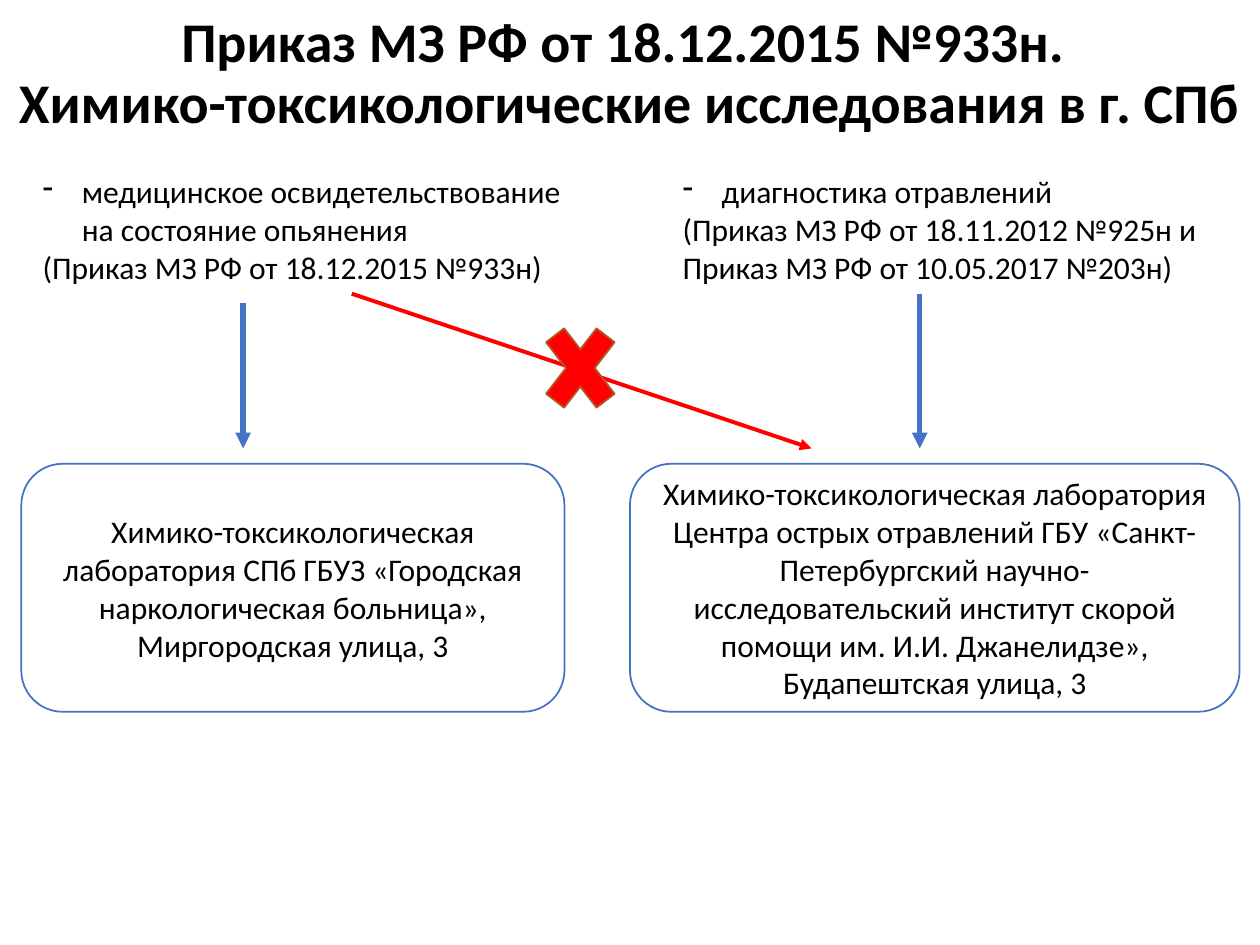
from dataclasses import dataclass

from lxml import etree
from pptx import Presentation
from pptx.dml.color import RGBColor
from pptx.enum.shapes import MSO_CONNECTOR, MSO_SHAPE
from pptx.enum.text import MSO_ANCHOR, MSO_AUTO_SIZE, PP_ALIGN
from pptx.oxml.ns import qn
from pptx.util import Cm, Pt

ROUND = MSO_SHAPE.ROUNDED_RECTANGLE
CROSS = MSO_SHAPE.MATH_MULTIPLY
LINE = MSO_CONNECTOR.STRAIGHT
MIDDLE = MSO_ANCHOR.MIDDLE
CENTER = PP_ALIGN.CENTER
LEFT = PP_ALIGN.LEFT
GROW = MSO_AUTO_SIZE.SHAPE_TO_FIT_TEXT
FIXED = MSO_AUTO_SIZE.NONE


@dataclass(frozen=True)
class Theme:
    font: str = "Calibri"
    head: int = 32
    body: int = 18
    ink: RGBColor = RGBColor(0, 0, 0)
    paper: RGBColor = RGBColor(255, 255, 255)
    blue: RGBColor = RGBColor(0x44, 0x72, 0xC4)
    red: RGBColor = RGBColor(255, 0, 0)
    brown: RGBColor = RGBColor(0xAF, 0x5C, 0x24)


class Page:
    def __init__(self, deck, theme):
        self.theme = theme
        self.slide = deck.slides.add_slide(deck.slide_layouts[5])

    def style(self, para, size, align, bold=False):
        para.alignment = align
        font = para.font
        font.name = self.theme.font
        font.size = Pt(size)
        font.bold = bold
        font.color.rgb = self.theme.ink

    def title(self, text, left, top, width, height):
        shape = self.slide.shapes.title
        shape.left, shape.top = Cm(left), Cm(top)
        shape.width, shape.height = Cm(width), Cm(height)
        frame = shape.text_frame
        frame.text = text
        frame.word_wrap = True
        frame.auto_size = FIXED
        frame.vertical_anchor = MIDDLE
        para = frame.paragraphs[0]
        para.line_spacing = 0.9
        self.style(para, self.theme.head, CENTER, True)

    def shape(self, kind, fill, edge, left, top, width, height):
        shape = self.slide.shapes.add_shape(
            kind, Cm(left), Cm(top), Cm(width), Cm(height))
        shape.shadow.inherit = False
        shape.fill.solid()
        shape.fill.fore_color.rgb = fill
        shape.line.color.rgb = edge
        shape.line.width = Pt(1)
        return shape

    def box(self, text, *place):
        shape = self.shape(ROUND, self.theme.paper, self.theme.blue, *place)
        frame = shape.text_frame
        frame.text = text
        frame.word_wrap = True
        frame.vertical_anchor = MIDDLE
        for para in frame.paragraphs:
            self.style(para, self.theme.body, CENTER)

    def cross(self, *place):
        self.shape(CROSS, self.theme.red, self.theme.brown, *place)

    def note(self, text, left, top, width, height):
        shape = self.slide.shapes.add_textbox(
            Cm(left), Cm(top), Cm(width), Cm(height))
        frame = shape.text_frame
        frame.text = text
        frame.word_wrap = True
        frame.auto_size = GROW
        for para in frame.paragraphs:
            self.style(para, self.theme.body, LEFT)
        self.dash(frame.paragraphs[0])

    def dash(self, para):
        props = para._p.get_or_add_pPr()
        indent = Cm(0.79)
        props.set("marL", str(indent))
        props.set("indent", str(-indent))
        mark = etree.Element(qn("a:buChar"), char="-")
        props.insert(0, mark)

    def arrow(self, start, end, color, width):
        line = self.slide.shapes.add_connector(
            LINE, *(Cm(n) for n in start + end))
        line.line.color.rgb = color
        line.line.width = Pt(width)
        props = line.element.spPr
        etree.SubElement(props.find(qn("a:ln")), qn("a:tailEnd"), type="triangle")
        etree.SubElement(props, qn("a:effectLst"))


def main():
    deck = Presentation()
    deck.slide_width, deck.slide_height = Cm(25.4), Cm(19.05)
    theme = Theme()
    page = Page(deck, theme)

    page.title("Приказ МЗ РФ от 18.12.2015 №933н. \v"
               "Химико-токсикологические исследования в г. СПб",
               -0.2, -0.33, 25.78, 3.68)

    box_top, box_height = 9.35, 5
    page.box("Химико-токсикологическая лаборатория СПб ГБУЗ «Городская "
             "наркологическая больница», Миргородская улица, 3",
             0.43, box_top, 10.95, box_height)
    page.box("Химико-токсикологическая лаборатория Центра острых отравлений "
             "ГБУ «Санкт-Петербургский научно-исследовательский институт "
             "скорой помощи им. И.И. Джанелидзе»,\nБудапештская улица, 3",
             12.7, box_top, 12.29, box_height)

    note_top, note_width, note_height = 3.35, 11.28, 2.57
    page.note("медицинское освидетельствование на состояние опьянения\n"
              "(Приказ МЗ РФ от 18.12.2015 №933н)",
              0.61, note_top, note_width, note_height)
    page.note("диагностика отравлений\n(Приказ МЗ РФ от 18.11.2012 №925н и "
              "Приказ МЗ РФ от 10.05.2017 №203н)",
              13.51, note_top, note_width, note_height)

    base, tip = note_top + note_height, 9.04
    page.arrow((4.9, 6.1), (4.9, tip), theme.blue, 3)
    page.arrow((18.54, base), (18.54, tip), theme.blue, 3)
    page.arrow((7.09, base), (16.36, tip), theme.red, 2.25)
    page.cross(10.72, 6.15, 1.96, 2.54)

    deck.save("out.pptx")


if __name__ == "__main__":
    main()
